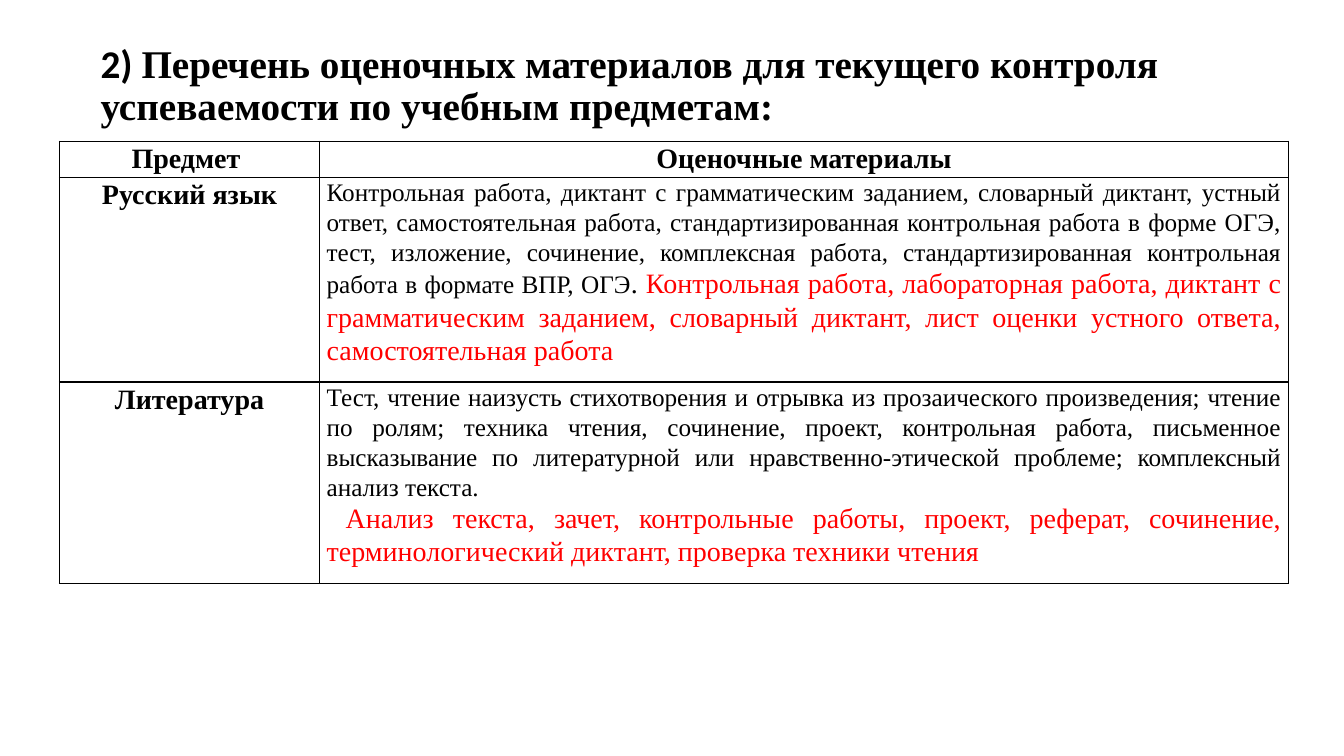
"""Builds the slide listing assessment materials by school subject."""
from lxml.etree import SubElement
from pptx import Presentation
from pptx.dml.color import RGBColor
from pptx.enum.text import PP_ALIGN as Align
from pptx.oxml.ns import qn
from pptx.util import Inches, Pt

SERIF = "Times New Roman"
BLACK, RED = "000000", "FF0000"
COLUMN_WIDTHS = (2.58, 9.61)
ROW_HEIGHTS = (0.25, 1.67, 1.43)

TITLE = [
    ("2) ", 28, BLACK, True, "Calibri"),
    ("Перечень оценочных материалов для текущего контроля успеваемости "
     "по учебным предметам:", 28, BLACK, True, SERIF),
]


def heading(words):
    """Return one bold paragraph for a heading cell."""
    return [[(words, 20, BLACK, True, SERIF)]]


def plain(words, size=18, color=BLACK):
    """Return the settings of one regular run."""
    return words, size, color, False, SERIF


RUSSIAN = [[
    plain("Контрольная работа, диктант с грамматическим заданием, словарный диктант, "
          "устный ответ, самостоятельная работа, стандартизированная контрольная работа "
          "в форме ОГЭ, тест, изложение, сочинение, комплексная работа, "
          "стандартизированная контрольная работа в формате ВПР, ОГЭ"),
    plain(". ", 20),
    plain("Контрольная работа, лабораторная работа, диктант с грамматическим заданием, "
          "словарный диктант, лист оценки устного ответа, самостоятельная работа", 20, RED),
]]
LITERATURE = [
    [plain("Тест, чтение наизусть стихотворения и отрывка из прозаического произведения; "
           "чтение по ролям; техника чтения, сочинение, проект, контрольная работа, "
           "письменное высказывание по литературной или нравственно-этической проблеме; "
           "комплексный анализ текста.")],
    [plain(" ", 20),
     plain("Анализ текста, зачет, контрольные работы, проект, реферат, сочинение, "
           "терминологический диктант, проверка техники чтения", 20, RED)],
]
SUBJECT_ROWS = [
    (heading("Предмет "), heading("Оценочные материалы")),
    (heading("Русский язык"), RUSSIAN),
    (heading("Литература"), LITERATURE),
]


def rgb(code):
    """Turn a hex string into a colour."""
    return RGBColor.from_string(code)


def write_runs(paragraph, runs):
    """Add formatted runs to a paragraph."""
    for words, size, color, bold, face in runs:
        run = paragraph.add_run()
        run.text = words
        run.font.size = Pt(size)
        run.font.color.rgb = rgb(color)
        run.font.bold = bold
        run.font.name = face


def add_title(slide):
    """Place the title text."""
    frame = slide.shapes.add_textbox(
        Inches(0.9), Inches(0.39), Inches(11.5), Inches(6.32)).text_frame
    frame.word_wrap = True
    paragraph = frame.paragraphs[0]
    paragraph.line_spacing = 0.9
    paragraph.space_before = Pt(10)
    write_runs(paragraph, TITLE)


def add_borders(cell):
    """Draw a thin black line on each side of a cell."""
    properties = cell._tc.get_or_add_tcPr()
    for side in ("a:lnL", "a:lnR", "a:lnT", "a:lnB"):
        line = SubElement(properties, qn(side), w=str(Pt(1)))
        fill = SubElement(line, qn("a:solidFill"))
        SubElement(fill, qn("a:srgbClr"), val=BLACK)


def fill_cell(cell, paragraphs, align):
    """Write and style one table cell."""
    cell.margin_left = cell.margin_right = Inches(0.07)
    cell.margin_top = cell.margin_bottom = 0
    add_borders(cell)
    cell.fill.background()
    frame = cell.text_frame
    for index, runs in enumerate(paragraphs):
        paragraph = frame.add_paragraph() if index else frame.paragraphs[0]
        paragraph.alignment = align
        paragraph.line_spacing = 1.07
        write_runs(paragraph, runs)


def add_subject_table(slide):
    """Place the table of subjects and materials."""
    table = slide.shapes.add_table(
        len(ROW_HEIGHTS), len(COLUMN_WIDTHS), Inches(0.59), Inches(1.4),
        Inches(sum(COLUMN_WIDTHS)), Inches(sum(ROW_HEIGHTS))).table
    table.first_row = table.horz_banding = False
    for column, width in zip(table.columns, COLUMN_WIDTHS):
        column.width = Inches(width)
    for row, height in zip(table.rows, ROW_HEIGHTS):
        row.height = Inches(height)
    for r, contents in enumerate(SUBJECT_ROWS):
        for c, paragraphs in enumerate(contents):
            align = Align.JUSTIFY if r and c else Align.CENTER
            fill_cell(table.cell(r, c), paragraphs, align)


def main():
    """Build and save the slide."""
    deck = Presentation()
    deck.slide_width, deck.slide_height = Inches(13.33), Inches(7.5)
    slide = deck.slides.add_slide(deck.slide_layouts[6])
    add_title(slide)
    add_subject_table(slide)
    deck.save("out.pptx")


if __name__ == "__main__":
    main()
